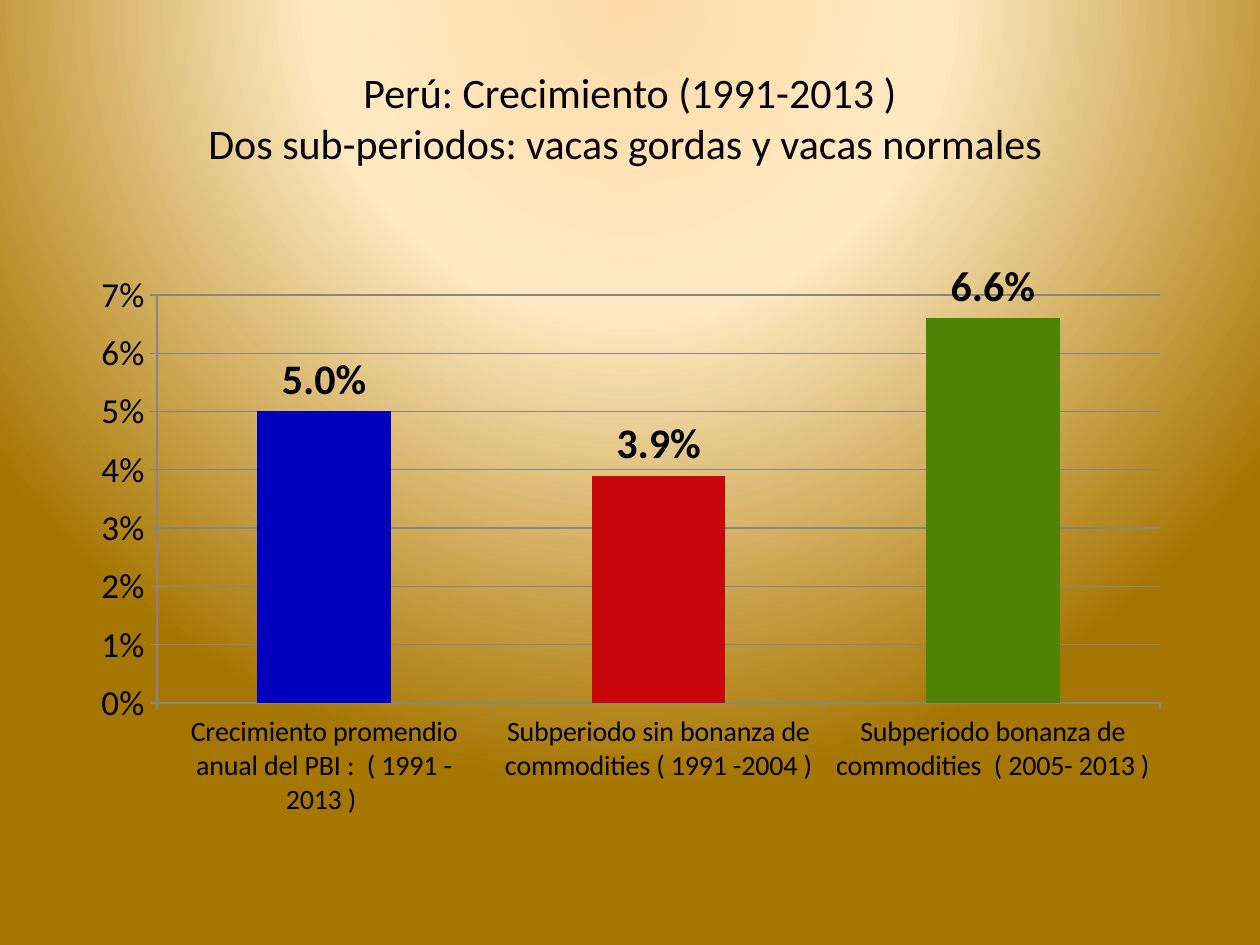
"""Build a slide with a column chart of Peruvian growth by sub-period."""
from dataclasses import dataclass

from pptx import Presentation, util as u
from pptx.chart import data as chart_data
from pptx.dml.color import RGBColor
from pptx.enum import chart as ch, text
from pptx.oxml import parse_xml
from pptx.oxml.ns import nsdecls

FONT = "Calibri"
BLACK = RGBColor(0x00, 0x00, 0x00)
GRID = RGBColor(0x86, 0x86, 0x86)
BLUE = RGBColor(0x00, 0x00, 0xBD)
RED = RGBColor(0xCA, 0x06, 0x0D)
GREEN = RGBColor(0x4E, 0x83, 0x05)
CREAM = RGBColor(0xFF, 0xDB, 0xA9)
PALE = RGBColor(0xFF, 0xE9, 0xC2)
GOLD = RGBColor(0xA6, 0x76, 0x02)
PX_PER_INCH = 126


@dataclass(frozen=True)
class Box:
    left: int
    top: int
    width: int
    height: int

    def emu(self) -> tuple:
        return tuple(px(n) for n in (self.left, self.top, self.width, self.height))


@dataclass(frozen=True)
class Period:
    label: str
    growth: float
    color: RGBColor


CHART = Box(79, 262, 1102, 567)
PLOT = Box(157, 295, 1003, 408)
PERIODS = (
    Period("Crecimiento promendio anual del PBI :  ( 1991 - 2013 ) ", 0.05, BLUE),
    Period("Subperiodo sin bonanza de commodities ( 1991 -2004 )", 0.039, RED),
    Period("Subperiodo bonanza de commodities  ( 2005- 2013 )", 0.066, GREEN),
)


def px(n: int) -> int:
    return round(n * u.Inches(1) / PX_PER_INCH)


def style_font(font, size: int, bold: bool = False) -> None:
    font.name, font.size, font.bold = FONT, u.Pt(size), bold
    font.color.rgb = BLACK


def add_text(slide, box: Box, wording: str, *, size: int, align, anchor) -> None:
    frame = slide.shapes.add_textbox(*box.emu()).text_frame
    frame.word_wrap = True
    frame.vertical_anchor = anchor
    frame.text = wording
    paragraph = frame.paragraphs[0]
    paragraph.alignment = align
    for run in paragraph.runs:
        style_font(run.font, size)


def paint_background(slide) -> None:
    stops = "".join(
        f'<a:gs pos="{percent * 1000}"><a:srgbClr val="{color}"/></a:gs>'
        for percent, color in ((0, CREAM), (40, PALE), (100, GOLD)))
    slide.element.cSld.insert(0, parse_xml(
        f'<p:bg {nsdecls("p", "a")}><p:bgPr><a:gradFill rotWithShape="1">'
        f'<a:gsLst>{stops}</a:gsLst><a:path path="circle">'
        '<a:fillToRect l="50000" t="-80000" r="50000" b="180000"/></a:path>'
        '</a:gradFill><a:effectLst/></p:bgPr></p:bg>'))


def fix_plot(chart, outer: Box, inner: Box) -> None:
    places = {
        "x": (inner.left - outer.left) / outer.width,
        "y": (inner.top - outer.top) / outer.height,
        "w": inner.width / outer.width,
        "h": inner.height / outer.height,
    }
    modes = '<c:xMode val="edge"/><c:yMode val="edge"/>'
    values = "".join(f'<c:{key} val="{place:.4f}"/>' for key, place in places.items())
    plot_area = chart.element.chart.plotArea
    for layout in plot_area.findall("{*}layout"):
        plot_area.remove(layout)
    plot_area.insert(0, parse_xml(
        f'<c:layout {nsdecls("c")}><c:manualLayout><c:layoutTarget val="inner"/>'
        f'{modes}{values}</c:manualLayout></c:layout>'))


def style_axis(axis, size: int) -> None:
    style_font(axis.tick_labels.font, size)
    axis.major_tick_mark = ch.XL_TICK_MARK.OUTSIDE
    axis.minor_tick_mark = ch.XL_TICK_MARK.NONE
    axis.format.line.color.rgb = GRID
    axis.format.line.width = u.Pt(0.75)


def add_growth_chart(slide) -> None:
    growth = chart_data.CategoryChartData(number_format="0.0%")
    growth.categories = [period.label for period in PERIODS]
    growth.add_series("Series 1", [period.growth for period in PERIODS])
    chart = slide.shapes.add_chart(
        ch.XL_CHART_TYPE.COLUMN_CLUSTERED, *CHART.emu(), growth).chart
    chart.has_legend = chart.has_title = False
    style_font(chart.font, 10)
    fix_plot(chart, CHART, PLOT)

    style_axis(chart.category_axis, 16)
    rates = chart.value_axis
    style_axis(rates, 20)
    rates.minimum_scale, rates.maximum_scale, rates.major_unit = 0, 0.07, 0.01
    rates.tick_labels.number_format = "0%"
    rates.tick_labels.number_format_is_linked = False
    rates.major_gridlines.format.line.color.rgb = GRID
    rates.major_gridlines.format.line.width = u.Pt(0.75)

    columns = chart.plots[0]
    columns.gap_width = 150
    columns.vary_by_categories = False
    series = columns.series[0]
    series.invert_if_negative = False
    series.format.fill.solid()
    series.format.fill.fore_color.rgb = RED
    for index, period in enumerate(PERIODS):
        fill = series.points[index].format.fill
        fill.solid()
        fill.fore_color.rgb = period.color
    labels = series.data_labels
    labels.show_value = True
    labels.number_format = "0.0%"
    labels.number_format_is_linked = False
    labels.position = ch.XL_LABEL_POSITION.OUTSIDE_END
    style_font(labels.font, 24, bold=True)


def main() -> None:
    deck = Presentation()
    deck.slide_width, deck.slide_height = u.Inches(10), u.Inches(7.5)
    slide = deck.slides.add_slide(deck.slide_layouts[6])
    paint_background(slide)
    add_text(slide, Box(79, 38, 1102, 158),
             "Perú: Crecimiento (1991-2013 )\v"
             "Dos sub-periodos: vacas gordas y vacas normales ",
             size=24, align=text.PP_ALIGN.CENTER, anchor=text.MSO_ANCHOR.MIDDLE)
    add_growth_chart(slide)
    deck.save("out.pptx")


if __name__ == "__main__":
    main()
